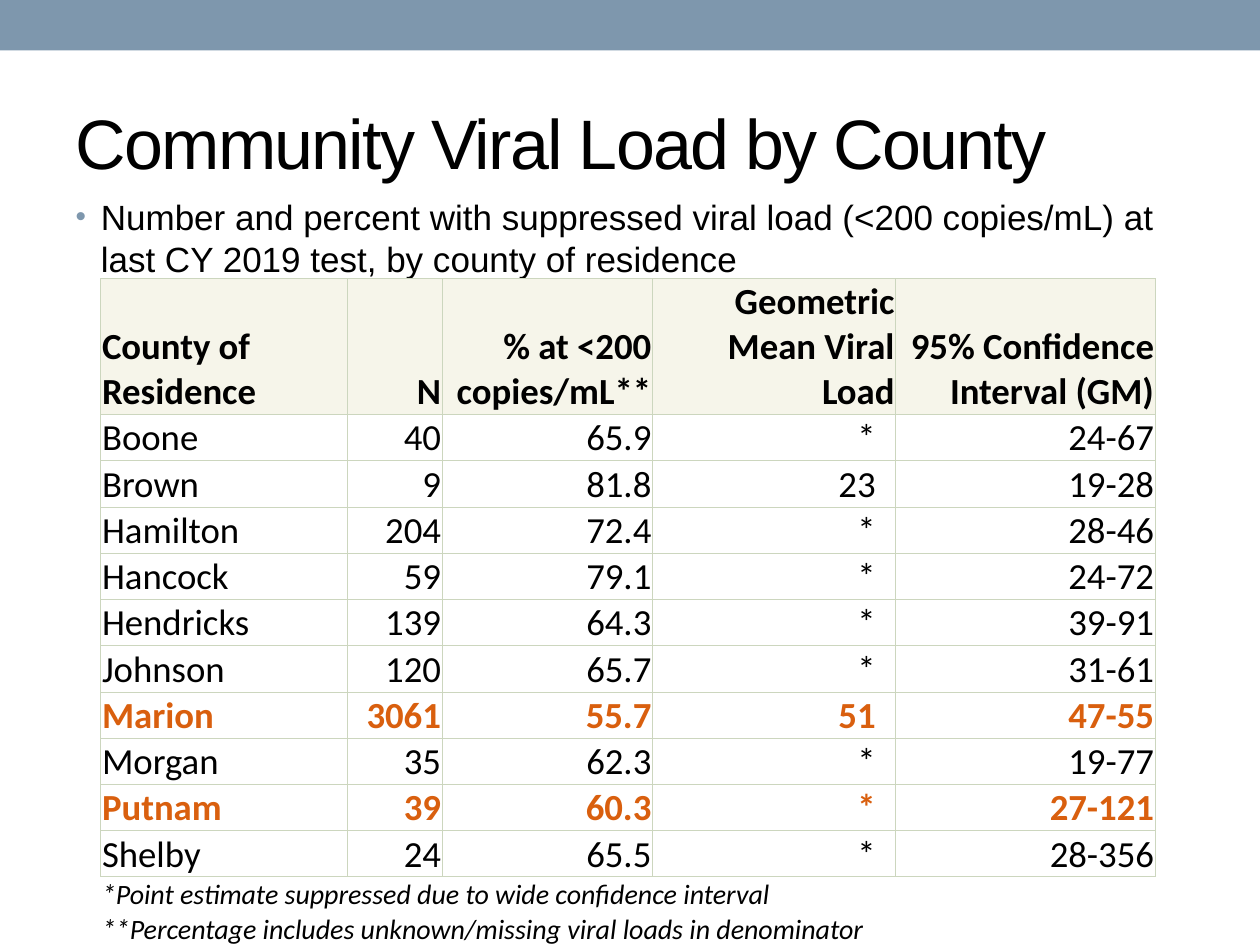
"""Build a slide with a table of community viral load by county."""
import dataclasses
import typing

import lxml.etree
import pptx
import pptx.dml.color
import pptx.enum.shapes
import pptx.enum.text
import pptx.oxml.ns
import pptx.util

ALIGN = pptx.enum.text.PP_ALIGN
ANCHOR = pptx.enum.text.MSO_ANCHOR


@dataclasses.dataclass(frozen=True)
class Theme:
    ink: str = "000000"
    band: str = "7E97AD"
    accent: str = "D95F0E"
    header_fill: str = "F6F5EA"
    border: str = "CCD6BE"
    heading_font: str = "Arial"
    table_font: str = "Calibri"
    title_size: float = 40
    body_size: float = 20
    table_size: float = 21
    note_size: float = 16
    border_width: float = 0.5


@dataclasses.dataclass(frozen=True)
class Area:
    """Place on a grid of 100 columns and 75 rows."""
    column: float
    row: float
    columns: float
    rows: float


class County(typing.NamedTuple):
    name: str
    count: str
    suppressed: str
    mean: str
    interval: str
    highlighted: bool = False


THEME = Theme()
GRID_UNIT = pptx.util.Inches(0.1)
BAND_AREA = Area(0, 0, 100, 4)
TITLE_AREA = Area(5, 5.8, 90, 10.8)
BODY_AREA = Area(5, 15, 90, 11.7)
TABLE_AREA = Area(8, 22.1, 83.7, 52.1)
COLUMN_WIDTHS = (19.6, 7.5, 16.7, 19.3, 20.6)
HEADER_HEIGHT, COUNTY_HEIGHT, NOTE_HEIGHT = 9.9, 3.5, 5.1
CELL_INSET, MEAN_INSET = 0.1, 1.6
MEAN_COLUMN = 3

TITLE = "Community Viral Load by County"
BODY = ("Number and percent with suppressed viral load (<200 copies/mL) at "
        "last CY 2019 test, by county of residence")
HEADERS = ("County of Residence", "N", "% at <200 copies/mL**",
           "Geometric Mean Viral Load", "95% Confidence Interval (GM)")
COUNTIES = (
    County("Boone", "40", "65.9", "*", "24-67"),
    County("Brown", "9", "81.8", "23", "19-28"),
    County("Hamilton", "204", "72.4", "*", "28-46"),
    County("Hancock", "59", "79.1", "*", "24-72"),
    County("Hendricks", "139", "64.3", "*", "39-91"),
    County("Johnson", "120", "65.7", "*", "31-61"),
    County("Marion", "3061", "55.7", "51", "47-55", True),
    County("Morgan", "35", "62.3", "*", "19-77"),
    County("Putnam", "39", "60.3", "*", "27-121", True),
    County("Shelby", "24", "65.5", "*", "28-356"),
)
NOTES = ("*Point estimate suppressed due to wide confidence interval",
         "**Percentage includes unknown/missing viral loads in denominator")


def grid(units: float) -> int:
    return round(units * GRID_UNIT)


def bounds(area: Area) -> tuple[int, ...]:
    return tuple(grid(value) for value in dataclasses.astuple(area))


def color(value: str) -> pptx.dml.color.RGBColor:
    return pptx.dml.color.RGBColor.from_string(value)


def add_element(parent, tag: str, **attributes: str):
    return lxml.etree.SubElement(parent, pptx.oxml.ns.qn(tag), attributes)


def write_text(paragraph, text: str, *, font: str = THEME.table_font,
               size: float = THEME.table_size, ink: str = THEME.ink,
               bold: bool = False, italic: bool = False, align=ALIGN.LEFT,
               spacing: float = 0) -> None:
    paragraph.alignment = align
    run = paragraph.add_run()
    run.text = text
    run.font.name = font
    run.font.size = pptx.util.Pt(size)
    run.font.bold = bold
    run.font.italic = italic
    run.font.color.rgb = color(ink)
    if spacing:
        run.font._element.set("spc", str(round(spacing * 100)))


def place(shape, area: Area) -> None:
    shape.left, shape.top, shape.width, shape.height = bounds(area)


def add_band(slide) -> None:
    band = slide.shapes.add_shape(
        pptx.enum.shapes.MSO_SHAPE.RECTANGLE, *bounds(BAND_AREA))
    band.shadow.inherit = False
    band.fill.solid()
    band.fill.fore_color.rgb = color(THEME.band)
    band.line.fill.background()


def fill_title(title) -> None:
    place(title, TITLE_AREA)
    title.text_frame.vertical_anchor = ANCHOR.MIDDLE
    write_text(title.text_frame.paragraphs[0], TITLE, font=THEME.heading_font,
               size=THEME.title_size, spacing=-1)


def fill_body(body) -> None:
    place(body, BODY_AREA)
    paragraph = body.text_frame.paragraphs[0]
    write_text(paragraph, BODY, font=THEME.heading_font, size=THEME.body_size)
    paragraph.space_before = paragraph.space_after = pptx.util.Pt(3)
    properties = paragraph._p.get_or_add_pPr()
    properties.set("marL", str(grid(2)))
    properties.set("indent", str(grid(-2)))
    bullet_color = add_element(properties, "a:buClr")
    add_element(bullet_color, "a:srgbClr", val=THEME.band)
    add_element(properties, "a:buSzPct", val="85000")
    add_element(properties, "a:buFont", typeface=THEME.heading_font)
    add_element(properties, "a:buChar", char="•")


def style_cell(cell, *, right_inset: float = CELL_INSET, sides: str = "LRTB",
               fill: str | None = None) -> None:
    cell.vertical_anchor = ANCHOR.BOTTOM
    cell.margin_left = cell.margin_top = grid(CELL_INSET)
    cell.margin_right = grid(right_inset)
    cell.margin_bottom = 0
    properties = cell._tc.get_or_add_tcPr()
    for side in "LRTB":
        line = add_element(properties, f"a:ln{side}",
                           w=str(pptx.util.Pt(THEME.border_width)))
        if side in sides:
            line_fill = add_element(line, "a:solidFill")
            add_element(line_fill, "a:srgbClr", val=THEME.border)
        else:
            add_element(line, "a:noFill")
    if fill:
        cell.fill.solid()
        cell.fill.fore_color.rgb = color(fill)
    else:
        cell.fill.background()


def fill_row(cells, texts: typing.Sequence[str], *, mean_inset: float = CELL_INSET,
             fill: str | None = None, **text_format) -> None:
    for column, (cell, text) in enumerate(zip(cells, texts)):
        style_cell(cell, fill=fill,
                   right_inset=mean_inset if column == MEAN_COLUMN else CELL_INSET)
        write_text(cell.text_frame.paragraphs[0], text,
                   align=ALIGN.RIGHT if column else ALIGN.LEFT, **text_format)


def add_county_table(slide) -> None:
    heights = (HEADER_HEIGHT, *[COUNTY_HEIGHT] * len(COUNTIES), NOTE_HEIGHT)
    table = slide.shapes.add_table(
        len(heights), len(HEADERS), *bounds(TABLE_AREA)).table
    table.first_row = table.horz_banding = False
    for column, width in zip(table.columns, COLUMN_WIDTHS):
        column.width = grid(width)
    for row, height in zip(table.rows, heights):
        row.height = grid(height)
    header_row, *county_rows, note_row = table.rows
    fill_row(header_row.cells, HEADERS, fill=THEME.header_fill, bold=True)
    for row, county in zip(county_rows, COUNTIES):
        fill_row(row.cells, county[:len(HEADERS)], mean_inset=MEAN_INSET,
                 bold=county.highlighted,
                 ink=THEME.accent if county.highlighted else THEME.ink)
    note_cells = list(note_row.cells)
    note_cells[0].merge(note_cells[-1])
    for cell in note_cells:
        style_cell(cell, sides="T")
    frame = note_cells[0].text_frame
    for index, note in enumerate(NOTES):
        paragraph = frame.add_paragraph() if index else frame.paragraphs[0]
        write_text(paragraph, note, size=THEME.note_size, italic=True)


def main() -> None:
    presentation = pptx.Presentation()
    presentation.slide_width, presentation.slide_height = grid(100), grid(75)
    slide = presentation.slides.add_slide(presentation.slide_layouts[1])
    add_band(slide)
    fill_title(slide.shapes.title)
    fill_body(slide.placeholders[1])
    add_county_table(slide)
    presentation.save("out.pptx")


if __name__ == "__main__":
    main()
